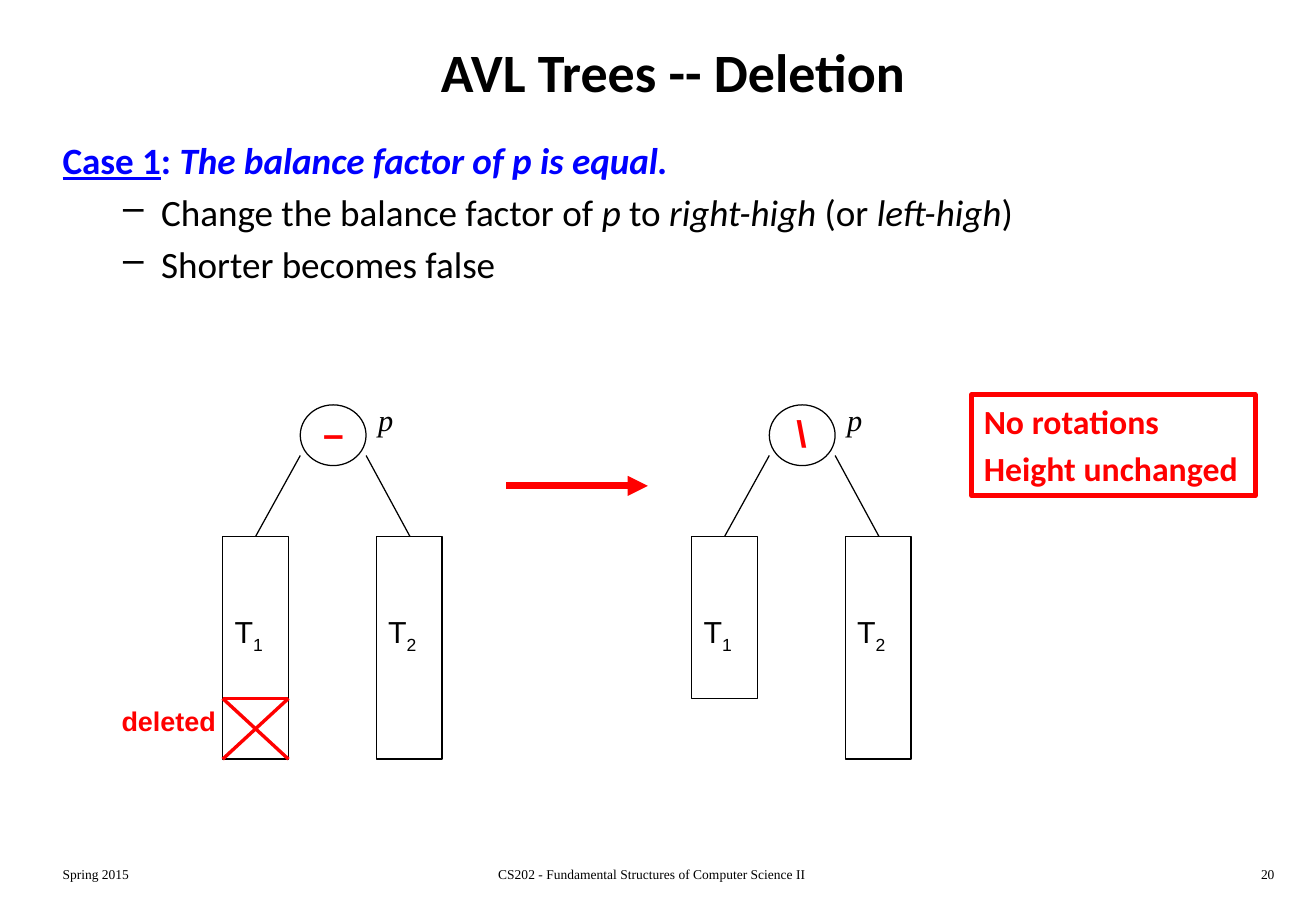
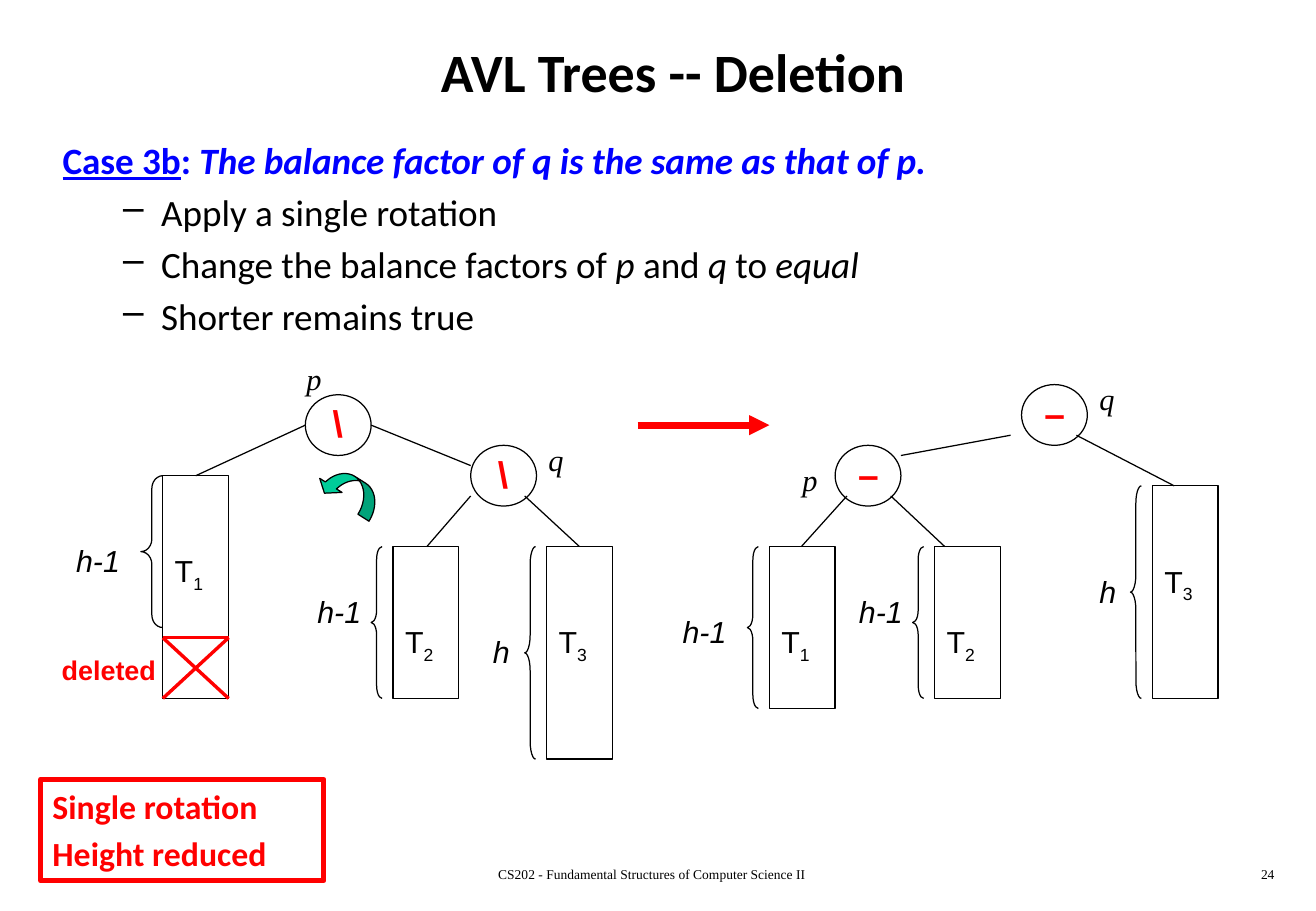
from pptx import Presentation
from pptx.dml.color import RGBColor
from pptx.enum.shapes import MSO_CONNECTOR, MSO_SHAPE as SHAPE
from pptx.enum.text import MSO_ANCHOR, PP_ALIGN as ALIGN
from pptx.oxml.ns import qn
from pptx.oxml.xmlchemy import OxmlElement
from pptx.util import Pt

BLACK = RGBColor(0x00, 0x00, 0x00)
RED = RGBColor(0xFF, 0x00, 0x00)
BLUE = RGBColor(0x00, 0x00, 0xFF)
GREEN = RGBColor(0x00, 0xCC, 0x99)

# Text styles
HEADING = dict(size=22, font="Calibri", color=BLUE, bold=True)
BULLET = dict(size=22, font="Calibri")
NOTE = dict(size=20, font="Calibri", color=RED, bold=True)
FOOTER = dict(size=8, font="Times New Roman")
SYMBOL = dict(size=22, color=RED, bold=True)
NAME = dict(size=18, font="Times New Roman", italic=True)
SUBTREE = dict(size=18)
HEIGHT = dict(size=18, italic=True)
DELETED = dict(size=16, color=RED, bold=True)

NODE_W, NODE_H = 39, 36
TREE_W = 39
CROSS_H = 36
SYMBOL_DX = {"–": 6.5, "\\": 9}

# nodes: x, y, balance symbol, name, name offset
# trees: x, top, height, number
# braces: x, top, width, height, label, label x, label y
# crosses: x, top, offset of the word "deleted"
SLIDES = [
    dict(
        heading=("Case 1", "The balance factor of p is equal."),
        bullets=["Change the balance factor of *p* to *right-high* (or *left-high*)",
                 "Shorter becomes false"],
        footer=("Spring 2015", "20"),
        nodes=[(178, 240, "–", "p", 39, -6), (456, 240, "\\", "p", 39, -6)],
        trees=[(132, 318, 132, 1), (223, 318, 132, 2),
               (410, 318, 96, 1), (501, 318, 132, 2)],
        edges=[(178, 270, 151.5, 318), (217, 270, 243, 318),
               (456, 270, 429.5, 318), (495, 270, 521, 318)],
        braces=[],
        crosses=[(132, 414, 0)],
        arrow=(300, 288, 384, 288),
        turns=[],
        note=(576, 234, ["No rotations", "Height unchanged"]),
    ),
    dict(
        heading=("Case 3b", "The balance factor of q is the same as that of p."),
        bullets=["Apply a single rotation",
                 "Change the balance factors of *p* and *q* to *equal*",
                 "Shorter remains true"],
        footer=("", "24"),
        nodes=[(181, 234, "\\", "p", -6.5, -24), (279, 264, "\\", "q", 39, -6),
               (605.5, 228, "–", "q", 39, -6), (495, 264, "–", "p", -26.5, 6)],
        trees=[(96.5, 282, 132, 1), (233, 324, 90, 2), (324, 324, 126, 3),
               (456, 324, 96, 1), (554, 324, 90, 2), (683, 288, 126, 3)],
        edges=[(181, 252, 116, 282), (220, 252, 279, 276),
               (279, 294, 253, 324), (311, 294, 343.5, 324),
               (599, 258, 534, 270), (638, 258, 696, 288),
               (502, 294, 475, 324), (528, 294, 560, 324)],
        braces=[(83.5, 282, 13, 90, "h-1", 38, 318),
                (220, 324, 6.5, 90, "h-1", 181, 348),
                (311, 324, 6.5, 126, "h", 285, 372),
                (443, 324, 6.5, 96, "h-1", 397.5, 360),
                (541, 324, 6.5, 90, "h-1", 502, 348),
                (670, 288, 6.5, 126, "h", 644.5, 336)],
        crosses=[(96.5, 378, 6)],
        arrow=(378, 252, 456, 252),
        turns=[(198, 271.5, 18, 39)],
        note=(24, 462, ["Single rotation", "Height reduced"]),
    ),
]


def write(p, text, size, font="Arial", color=BLACK, bold=False, italic=False,
          underline=False, align=ALIGN.LEFT):
    """Add text to a paragraph; *stars* mark italics, _ starts a subscript."""
    p.alignment = align
    for i, part in enumerate(text.split("*")):
        for j, piece in enumerate(part.split("_")):
            if not piece:
                continue
            r = p.add_run()
            r.text = piece
            f = r.font
            f.size, f.name, f.bold, f.underline = Pt(size), font, bold, underline
            f.italic = italic or i % 2 == 1
            f.color.rgb = color
            if j:
                f._element.set("baseline", "-25000")


def line(s, ends, color=BLACK, width=0.75, arrow=False):
    cx = s.shapes.add_connector(MSO_CONNECTOR.STRAIGHT, *map(Pt, ends))
    cx.line.color.rgb = color
    cx.line.width = Pt(width)
    if arrow:
        tip = OxmlElement("a:tailEnd")
        tip.set("type", "triangle")
        cx.line._get_or_add_ln().append(tip)
    cx._element.spPr.append(OxmlElement("a:effectLst"))


prs = Presentation()
prs.slide_width, prs.slide_height = Pt(780), Pt(540)

# Shared title position
layout = prs.slide_layouts[5]
title = layout.placeholders[0]
title.left, title.top, title.width, title.height = Pt(30), Pt(12), Pt(738), Pt(60.5)
title.text_frame.vertical_anchor = MSO_ANCHOR.MIDDLE

for d in SLIDES:
    s = prs.slides.add_slide(layout)
    write(s.shapes.title.text_frame.paragraphs[0], "AVL Trees -- Deletion",
          size=32, font="Calibri", bold=True, align=ALIGN.CENTER)

    # Case heading and bullets
    tf = s.shapes.add_textbox(Pt(30), Pt(78), Pt(654), Pt(120)).text_frame
    tf.word_wrap = True
    p = tf.paragraphs[0]
    case, statement = d["heading"]
    write(p, case, underline=True, **HEADING)
    write(p, ": ", **HEADING)
    write(p, statement, italic=True, **HEADING)
    for text in d["bullets"]:
        p = tf.add_paragraph()
        p.space_before = Pt(4.4)
        write(p, text, **BULLET)
        pPr = p._p.get_or_add_pPr()
        pPr.set("marL", str(Pt(58.5)))
        pPr.set("indent", str(Pt(-22.5)))
        bullet = OxmlElement("a:buChar")
        bullet.set("char", "–")
        pPr.append(bullet)

    # Outlined shapes: preset, x, y, width, height, adjustments
    shapes = [(SHAPE.OVAL, x, y, NODE_W, NODE_H, []) for x, y, *_ in d["nodes"]]
    shapes += [(SHAPE.RECTANGLE, x, y, TREE_W, h, []) for x, y, h, _ in d["trees"]]
    shapes += [(SHAPE.LEFT_BRACE, x, y, w, h, [h / 12 / w, 0.5])
               for x, y, w, h, *_ in d["braces"]]
    for preset, x, y, w, h, adjustments in shapes:
        sp = s.shapes.add_shape(preset, Pt(x), Pt(y), Pt(w), Pt(h))
        sp.shadow.inherit = False
        sp.fill.background()
        sp.line.color.rgb = BLACK
        sp.line.width = Pt(0.75)
        for i, value in enumerate(adjustments):
            sp.adjustments[i] = value

    # Tree edges, crossed-out parts and step arrow
    for ends in d["edges"]:
        line(s, ends)
    for x, y, _ in d["crosses"]:
        right, bottom = x + TREE_W, y + CROSS_H
        for ends in [(x, y, right, y), (x, y, right, bottom), (right, y, x, bottom)]:
            line(s, ends, RED, 2)
    line(s, d["arrow"], RED, 4, arrow=True)

    # Rotation arrow
    for x, y, w, h in d["turns"]:
        sp = s.shapes.add_shape(SHAPE.CURVED_LEFT_ARROW, Pt(x), Pt(y), Pt(w), Pt(h))
        sp.shadow.inherit = False
        sp.fill.solid()
        sp.fill.fore_color.rgb = GREEN
        sp.line.color.rgb = BLACK
        sp.line.width = Pt(0.75)
        sp.rotation = 302.2
        sp._element.spPr.find(qn("a:xfrm")).set("flipV", "1")
        for i, value in enumerate([0.43, 0.87, 0.33]):
            sp.adjustments[i] = value

    # Labels and footers: text, x, y, width, height, style
    term, number = d["footer"]
    labels = [
        (term, 30, 510, 163, 18, FOOTER),
        ("CS202 - Fundamental Structures of Computer Science II",
         240.5, 510, 292, 18, dict(FOOTER, align=ALIGN.CENTER)),
        (number, 600, 510, 162.5, 18, dict(FOOTER, align=ALIGN.RIGHT)),
    ]
    for x, y, symbol, name, dx, dy in d["nodes"]:
        labels += [(symbol, x + SYMBOL_DX[symbol], y, 32.5, 34, SYMBOL),
                   (name, x + dx, y + dy, 45, 29, NAME)]
    labels += [(f"T_{n}", x, y + 42, TREE_W, 29, SUBTREE) for x, y, _, n in d["trees"]]
    labels += [(text, x, y, 65, 29, HEIGHT) for *_, text, x, y in d["braces"]]
    labels += [("deleted", x - 67, y + dy, 91, 27, DELETED) for x, y, dy in d["crosses"]]
    for text, x, y, w, h, style in labels:
        if text:
            tf = s.shapes.add_textbox(Pt(x), Pt(y), Pt(w), Pt(h)).text_frame
            tf.word_wrap = True
            write(tf.paragraphs[0], text, **style)

    # Result box
    x, y, lines = d["note"]
    sp = s.shapes.add_shape(SHAPE.RECTANGLE, Pt(x), Pt(y), Pt(168), Pt(60))
    sp.shadow.inherit = False
    sp.fill.background()
    sp.line.color.rgb = RED
    sp.line.width = Pt(3)
    tf = sp.text_frame
    tf.word_wrap = True
    tf.vertical_anchor = MSO_ANCHOR.TOP
    for i, text in enumerate(lines):
        p = tf.add_paragraph() if i else tf.paragraphs[0]
        p.space_before = Pt(4)
        write(p, text, **NOTE)

prs.save("out.pptx")
